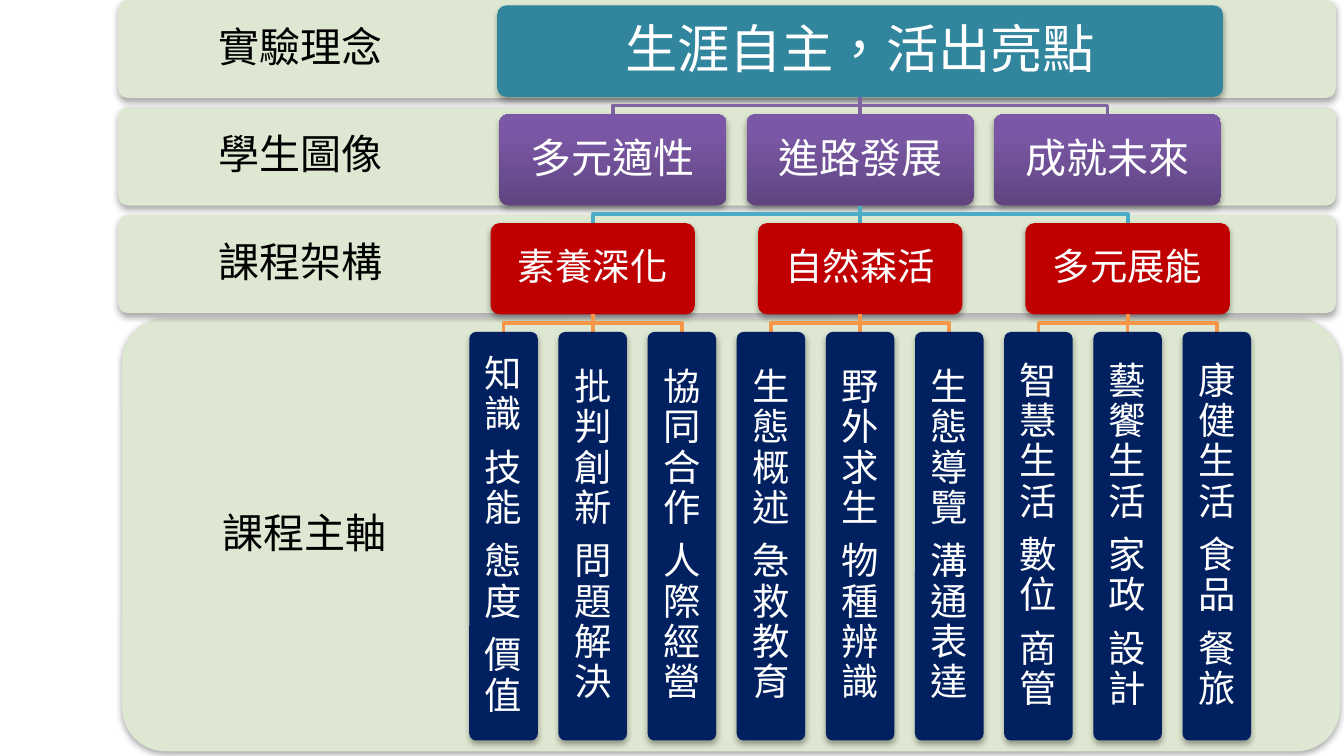
from copy import deepcopy

from lxml import etree
from pptx import Presentation
from pptx import util as u
from pptx.dml.color import RGBColor
from pptx.enum import lang, shapes, text
from pptx.oxml import ns

FONT = "Noto Sans CJK SC"
BLACK = RGBColor(0x00, 0x00, 0x00)
WHITE = RGBColor(0xFF, 0xFF, 0xFF)
SAGE = RGBColor(0xDE, 0xE7, 0xD1)
TEAL = RGBColor(0x31, 0x85, 0x9C)
RED = RGBColor(0xC0, 0x00, 0x00)
NAVY = RGBColor(0x00, 0x20, 0x60)
VIOLET_LINE = RGBColor(0x80, 0x64, 0xA2)
AQUA_LINE = RGBColor(0x4B, 0xAC, 0xC6)
ORANGE_LINE = RGBColor(0xF7, 0x96, 0x46)
VIOLET_STOPS = (
    (0, RGBColor(0x5F, 0x44, 0x80)),
    (0.8, RGBColor(0x7B, 0x58, 0xA6)),
    (1, RGBColor(0x7C, 0x57, 0xA8)),
)

WIDTH = 10
HEIGHT = WIDTH * 9 / 16
BAND_LEFT, BAND_WIDTH, BAND_HEIGHT, BAND_PITCH = 0.88, 9.06, 0.73, 0.8
AXIS_BAND = (0.91, 2.37, BAND_WIDTH, 3.22)
LABEL_SHARE = 0.3
TREE_CENTER, TREE_TOP = 6.4, 0.04
TIER_PITCH, CARD_HEIGHT, AXIS_HEIGHT = 0.81, 0.68, 3.04
IMAGE_PITCH, FRAME_PITCH = 1.84, 1.99
AXIS_PITCH = FRAME_PITCH / 3

BANDS = ("實驗理念", "學生圖像", "課程架構")
IDEA = "生涯自主，活出亮點"
IMAGES = ("多元適性", "進路發展", "成就未來")
FRAMES = {
    "素養深化": ("知識\n技能\n態度\n價值", "批判創新\n問題解決", "協同合作\n人際經營"),
    "自然森活": ("生態概述\n急救教育", "野外求生\n物種辨識", "生態導覽\n溝通表達"),
    "多元展能": ("智慧生活\n數位\n商管", "藝饗生活\n家政\n設計", "康健生活\n食品\n餐旅"),
}


def write(frame, words, *, size, color, inset):
    """Fill a text frame with centred paragraphs, one for each line of words."""
    frame.word_wrap = True
    frame.vertical_anchor = text.MSO_ANCHOR.MIDDLE
    frame.margin_left = frame.margin_right = u.Inches(inset)
    frame.margin_top = frame.margin_bottom = u.Inches(inset)
    for index, line in enumerate(words.split("\n")):
        paragraph = frame.add_paragraph() if index else frame.paragraphs[0]
        paragraph.alignment = text.PP_ALIGN.CENTER
        paragraph.line_spacing = 0.9
        paragraph.space_after = u.Pt(size * 0.35)
        run = paragraph.add_run()
        run.text = line
        run.font.size = u.Pt(size)
        run.font.name = FONT
        run.font.language_id = lang.MSO_LANGUAGE_ID.TRADITIONAL_CHINESE
        run.font.color.rgb = color
        east_asian = etree.SubElement(run.font._element, ns.qn("a:ea"))
        east_asian.set("typeface", FONT)


def cast_shadow(panel):
    """Give a panel a soft shadow straight below it."""
    panel.shadow.inherit = False
    effects = panel._element.spPr.find(ns.qn("a:effectLst"))
    shadow = etree.SubElement(effects, ns.qn("a:outerShdw"), blurRad="40000",
                              dist="23000", dir="5400000", rotWithShape="0")
    tone = etree.SubElement(shadow, ns.qn("a:srgbClr"), val="000000")
    etree.SubElement(tone, ns.qn("a:alpha"), val="35000")


def shade(panel, stops):
    """Fill a panel with a three-stop gradient that rises from its foot."""
    panel.fill.gradient()
    panel.fill.gradient_angle = 90
    stop_list = panel._element.spPr.find(".//" + ns.qn("a:gsLst"))
    stop_list.append(deepcopy(stop_list[-1]))
    for stop, (position, color) in zip(panel.fill.gradient_stops, stops):
        stop.position = position
        stop.color.rgb = color


def add_panel(slide, box, fill):
    """Add a rounded, shadowed panel in a colour or a gradient."""
    panel = slide.shapes.add_shape(shapes.MSO_SHAPE.ROUNDED_RECTANGLE, *map(u.Inches, box))
    panel.adjustments[0] = 0.1
    panel.line.fill.background()
    if isinstance(fill, RGBColor):
        panel.fill.solid()
        panel.fill.fore_color.rgb = fill
    else:
        shade(panel, fill)
    cast_shadow(panel)
    return panel


def add_band(slide, box, label):
    """Add a background band with its label in the left share."""
    add_panel(slide, box, SAGE)
    left, top, width, height = box
    label_box = slide.shapes.add_textbox(
        *map(u.Inches, (left, top, width * LABEL_SHARE, height)))
    write(label_box.text_frame, label, size=22, color=BLACK, inset=0.17)


def add_card(slide, box, words, fill, *, size, inset):
    """Add a card of the tree with white text."""
    card = add_panel(slide, box, fill)
    write(card.text_frame, words, size=size, color=WHITE, inset=inset)


def add_branch(slide, start, end, color):
    """Join a parent's foot to a child's head, with an elbow where they are apart."""
    x1, y1, x2, y2 = map(u.Inches, (*start, *end))
    if x1 == x2:
        branch = slide.shapes.add_connector(shapes.MSO_CONNECTOR.STRAIGHT, x1, y1, x2, y2)
        etree.SubElement(branch._element.spPr, ns.qn("a:effectLst"))
    else:
        middle = (y1 + y2) // 2
        builder = slide.shapes.build_freeform(x1, y1)
        builder.add_line_segments([(x1, middle), (x2, middle), (x2, y2)], close=False)
        branch = builder.convert_to_shape()
        branch.fill.background()
        branch.shadow.inherit = False
    branch.line.color.rgb = color
    branch.line.width = u.Pt(2)


def add_tier(slide, row, parent, pitch, width, height, words, fill, color, **style):
    """Add a row of cards centred below a parent and return their centres."""
    top = TREE_TOP + row * TIER_PITCH
    centers = [parent + (index - (len(words) - 1) / 2) * pitch for index in range(len(words))]
    for center, card_words in zip(centers, words):
        if row:
            add_branch(slide, (parent, top - TIER_PITCH + CARD_HEIGHT), (center, top), color)
        add_card(slide, (center - width / 2, top, width, height), card_words, fill, **style)
    return centers


def add_bands(slide):
    """Add the four labelled bands."""
    add_band(slide, AXIS_BAND, "課程主軸")
    for row, label in reversed(list(enumerate(BANDS))):
        add_band(slide, (BAND_LEFT, row * BAND_PITCH, BAND_WIDTH, BAND_HEIGHT), label)


def add_tree(slide):
    """Add the tree from the idea down to the course axes."""
    add_tier(slide, 0, TREE_CENTER, 0, 5.4, CARD_HEIGHT, (IDEA,), TEAL, None,
             size=28, inset=0.12)
    add_tier(slide, 1, TREE_CENTER, IMAGE_PITCH, 1.69, CARD_HEIGHT, IMAGES,
             VIOLET_STOPS, VIOLET_LINE, size=22, inset=0.09)
    centers = add_tier(slide, 2, TREE_CENTER, FRAME_PITCH, 1.52, CARD_HEIGHT,
                       list(FRAMES), RED, AQUA_LINE, size=20, inset=0.08)
    for center, axes in zip(centers, FRAMES.values()):
        add_tier(slide, 3, center, AXIS_PITCH, 0.51, AXIS_HEIGHT, axes,
                 NAVY, ORANGE_LINE, size=20, inset=0.08)


def main():
    """Build the slide and save it."""
    deck = Presentation()
    deck.slide_width, deck.slide_height = u.Inches(WIDTH), u.Inches(HEIGHT)
    slide = deck.slides.add_slide(deck.slide_layouts[6])
    add_bands(slide)
    add_tree(slide)
    deck.save("out.pptx")


if __name__ == "__main__":
    main()
